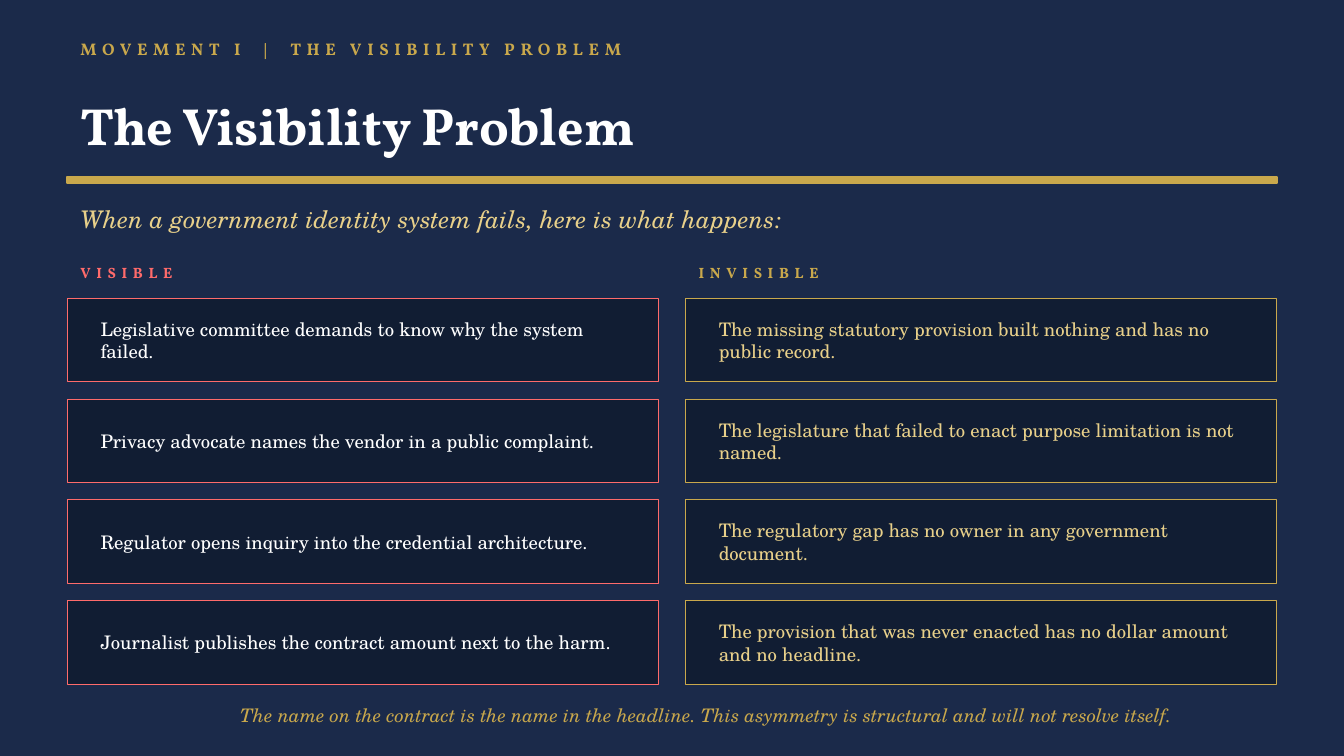
from pptx import Presentation
from pptx.dml.color import RGBColor
from pptx.enum.shapes import MSO_SHAPE
from pptx.enum.text import MSO_ANCHOR, PP_ALIGN
from pptx.util import Pt

COLORS = {
    "navy": "1B2A4A", "card": "111D33", "gold": "C9A84C",
    "pale": "E8D08A", "red": "FF6B6B", "white": "FFFFFF",
}
HEADING, BODY = "Vollkorn", "TeX Gyre Schola"

KICKER = "MOVEMENT I  |  THE VISIBILITY PROBLEM"
TITLE = "The Visibility Problem"
LEAD = "When a government identity system fails, here is what happens:"
CLOSING = ("The name on the contract is the name in the headline. "
           "This asymmetry is structural and will not resolve itself.")
COLUMNS = [
    {"label": "VISIBLE", "accent": "red", "text": "white", "cards": [
        "Legislative committee demands to know why the system failed.",
        "Privacy advocate names the vendor in a public complaint.",
        "Regulator opens inquiry into the credential architecture.",
        "Journalist publishes the contract amount next to the harm.",
    ]},
    {"label": "INVISIBLE", "accent": "gold", "text": "pale", "cards": [
        "The missing statutory provision built nothing and has no public record.",
        "The legislature that failed to enact purpose limitation is not named.",
        "The regulatory gap has no owner in any government document.",
        "The provision that was never enacted has no dollar amount and no headline.",
    ]},
]

# Layout in points
SLIDE_W, SLIDE_H = 720, 405
MARGIN = 36
CONTENT_W = SLIDE_W - 2 * MARGIN
COL_GAP = 14.4
COL_W = (CONTENT_W - COL_GAP) / 2
LABEL_TOP, CARD_TOP = 136.8, 159.84
CARD_H, CARD_PITCH = 44.64, 54
PAD_X, PAD_Y = 10.8, 7.2


def rgb(name):
    return RGBColor.from_string(COLORS[name])


def add_text(s, text, x, y, w, h, size, color, font=BODY, bold=False,
             italic=False, tracking=0, align=PP_ALIGN.LEFT):
    tf = s.shapes.add_textbox(Pt(x), Pt(y), Pt(w), Pt(h)).text_frame
    tf.word_wrap = True
    tf.vertical_anchor = MSO_ANCHOR.MIDDLE
    p = tf.paragraphs[0]
    p.alignment = align
    r = p.add_run()
    r.text = text
    if tracking:
        r._r.get_or_add_rPr().set("spc", str(tracking * 100))
    p.font.name, p.font.size = font, Pt(size)
    p.font.bold, p.font.italic = bold, italic
    p.font.color.rgb = rgb(color)


def add_box(s, x, y, w, h, fill, line, line_w):
    sp = s.shapes.add_shape(MSO_SHAPE.RECTANGLE, Pt(x), Pt(y), Pt(w), Pt(h))
    sp.shadow.inherit = False
    sp.fill.solid()
    sp.fill.fore_color.rgb = rgb(fill)
    sp.line.color.rgb = rgb(line)
    sp.line.width = Pt(line_w)


def add_column(s, x, column):
    add_text(s, column["label"], x, LABEL_TOP, COL_W, 18, 8, column["accent"],
             HEADING, bold=True, tracking=3)
    for i, text in enumerate(column["cards"]):
        y = CARD_TOP + i * CARD_PITCH
        add_box(s, x, y, COL_W, CARD_H, "card", column["accent"], 0.5)
        add_text(s, text, x + PAD_X, y + PAD_Y, COL_W - 2 * PAD_X,
                 CARD_H - 2 * PAD_Y, 10, column["text"])


def main():
    prs = Presentation()
    prs.slide_width, prs.slide_height = Pt(SLIDE_W), Pt(SLIDE_H)
    s = prs.slides.add_slide(prs.slide_layouts[6])
    s.background.fill.solid()
    s.background.fill.fore_color.rgb = rgb("navy")

    add_text(s, KICKER, MARGIN, 15.84, CONTENT_W, 20.16, 9, "gold", HEADING,
             bold=True, tracking=3)
    add_text(s, TITLE, MARGIN, 39.6, CONTENT_W, 54, 28, "white", HEADING, bold=True)
    add_box(s, MARGIN, 95.04, CONTENT_W, 2.88, "gold", "gold", 1)
    add_text(s, LEAD, MARGIN, 104.4, CONTENT_W, 25.2, 13, "pale", italic=True)

    for i, column in enumerate(COLUMNS):
        add_column(s, MARGIN + i * (COL_W + COL_GAP), column)

    # The closing line's box runs to the right edge of the slide
    add_text(s, CLOSING, MARGIN, 372.96, SLIDE_W - MARGIN, 20.16, 10, "gold",
             italic=True, align=PP_ALIGN.CENTER)
    prs.save("out.pptx")


if __name__ == "__main__":
    main()
